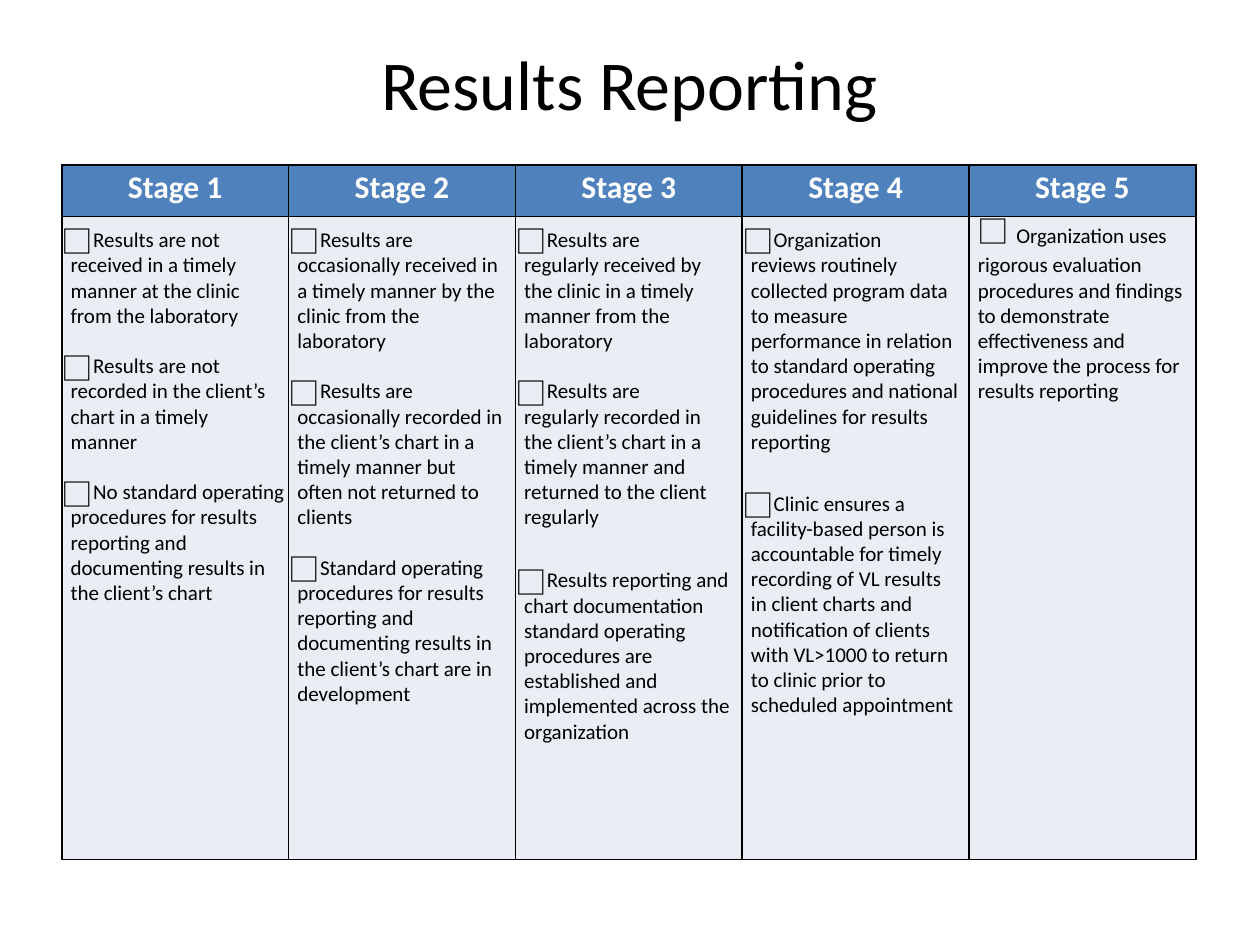
"""Build the Results Reporting slide: a table of five maturity stages."""
from lxml import etree
from pptx import Presentation
from pptx import util as u
from pptx.dml.color import RGBColor
from pptx.enum import text
from pptx.oxml.ns import qn

COLORS = {"head": "4F81BD", "body": "E9EDF4", "line": "000000", "text": "000000", "white": "FFFFFF"}
BOX = "□"
STAGES = [
    [("Results are not", "received in a timely manner at the clinic\vfrom the laboratory"),
     ("Results are not\vrecorded in the client’s chart in a timely\vmanner",),
     ("No standard operating procedures for results reporting and documenting results in the client’s chart",)],
    [("Results are", "occasionally received in\va timely manner by the clinic from the\vlaboratory"),
     ("Results are\voccasionally recorded in\vthe client’s chart in a timely manner but\v"
      "often not returned to clients",),
     ("Standard operating procedures for results reporting and documenting results in "
      "the client’s chart are in development",)],
    [("Results are", "regularly received by\vthe clinic in a timely manner from the laboratory"),
     ("Results are\vregularly recorded in\vthe client’s chart in a timely manner and "
      "returned to the client regularly",),
     ("Results reporting and chart documentation standard operating procedures are "
      "established and implemented across the organization",)],
    [("Organization", "reviews routinely\vcollected program data\vto measure\vperformance in relation\v"
      "to standard operating procedures and national guidelines for results reporting"),
     ("Clinic ensures a\vfacility-based person is accountable for timely recording of VL results\v"
      "in client charts and notification of clients\vwith VL>1000 to return\v"
      "to clinic prior to scheduled appointment",)],
    [("Organization uses", "rigorous evaluation procedures and findings to demonstrate "
      "effectiveness and\vimprove the process for results reporting")],
]
GAPS = {(2, 2): 21.6, (3, 1): 21}
COL, HEAD, BODY = 1.8, 0.41, 5.1


def write(p, words, size, color="text", bold=False, font="Calibri"):
    for i, part in enumerate(words.split("\v")):
        if i:
            p.add_line_break()
        r = p.add_run()
        r.text = part
        for key, value in {"size": u.Pt(size), "bold": bold, "name": font}.items():
            setattr(r.font, key, value)
        r.font.color.rgb = RGBColor.from_string(COLORS[color])


def dress(cell, fill, top):
    for side in ("left", "right", "bottom"):
        setattr(cell, f"margin_{side}", 0)
    cell.margin_top = u.Inches(top)
    tc_pr = cell._tc.get_or_add_tcPr()
    for side in ("lnL", "lnR", "lnT", "lnB"):
        ln = etree.SubElement(tc_pr, qn(f"a:{side}"), w=str(u.Pt(1)))
        solid = etree.SubElement(ln, qn("a:solidFill"))
        etree.SubElement(solid, qn("a:srgbClr"), val=COLORS["line"])
    cell.fill.solid()
    cell.fill.fore_color.rgb = RGBColor.from_string(COLORS[fill])


prs = Presentation()
prs.slide_width, prs.slide_height = u.Inches(10), u.Inches(7.5)
s = prs.slides.add_slide(prs.slide_layouts[5])

title = s.shapes.title
for key, value in {"left": 3.01, "top": 0.3, "width": 3.97, "height": 0.71}.items():
    setattr(title, key, u.Inches(value))
tf = title.text_frame
for key, value in {"margin_left": 0, "margin_right": 0, "margin_top": 0, "margin_bottom": 0,
                   "word_wrap": True, "vertical_anchor": text.MSO_ANCHOR.MIDDLE}.items():
    setattr(tf, key, value)
tf.paragraphs[0].alignment = text.PP_ALIGN.CENTER
write(tf.paragraphs[0], "Results Reporting", 40)

table = s.shapes.add_table(2, len(STAGES), u.Inches(0.49), u.Inches(1.31),
                           u.Inches(COL * len(STAGES)), u.Inches(HEAD + BODY)).table
table.rows[0].height, table.rows[1].height = u.Inches(HEAD), u.Inches(BODY)

for c, items in enumerate(STAGES):
    table.columns[c].width = u.Inches(COL)
    head, body = table.cell(0, c), table.cell(1, c)
    dress(head, "head", 0.03)
    dress(body, "body", 0)
    p = head.text_frame.paragraphs[0]
    p.alignment = text.PP_ALIGN.CENTER
    p.space_before = u.Pt(1.9)
    write(p, f"Stage {c + 1}", 18, "white", True)

    tf = body.text_frame
    for n, item in enumerate(items):
        for k, words in enumerate(item):
            first = n == 0 and k == 0
            p = tf.paragraphs[0] if first else tf.add_paragraph()
            p.line_spacing = u.Pt(20.6 if first else 14.4)
            p.space_before = u.Pt(0 if first else 0.3 if k else GAPS.get((c, n), 14.4))
            p_pr = p._p.get_or_add_pPr()
            p_pr.set("marL", str(u.Inches(0.07)))
            if k == 0 and len(items) > 1:
                p_pr.set("indent", str(-u.Inches(0.07)))
                etree.SubElement(p_pr, qn("a:buSzPct"), val="150000")
                etree.SubElement(p_pr, qn("a:buFont"), typeface="Noto Sans CJK JP")
                etree.SubElement(p_pr, qn("a:buChar"), char=BOX)
            elif k == 0:
                write(p, BOX + " ", 18, font="Noto Sans CJK JP")
            write(p, words, 12)

prs.save("out.pptx")
